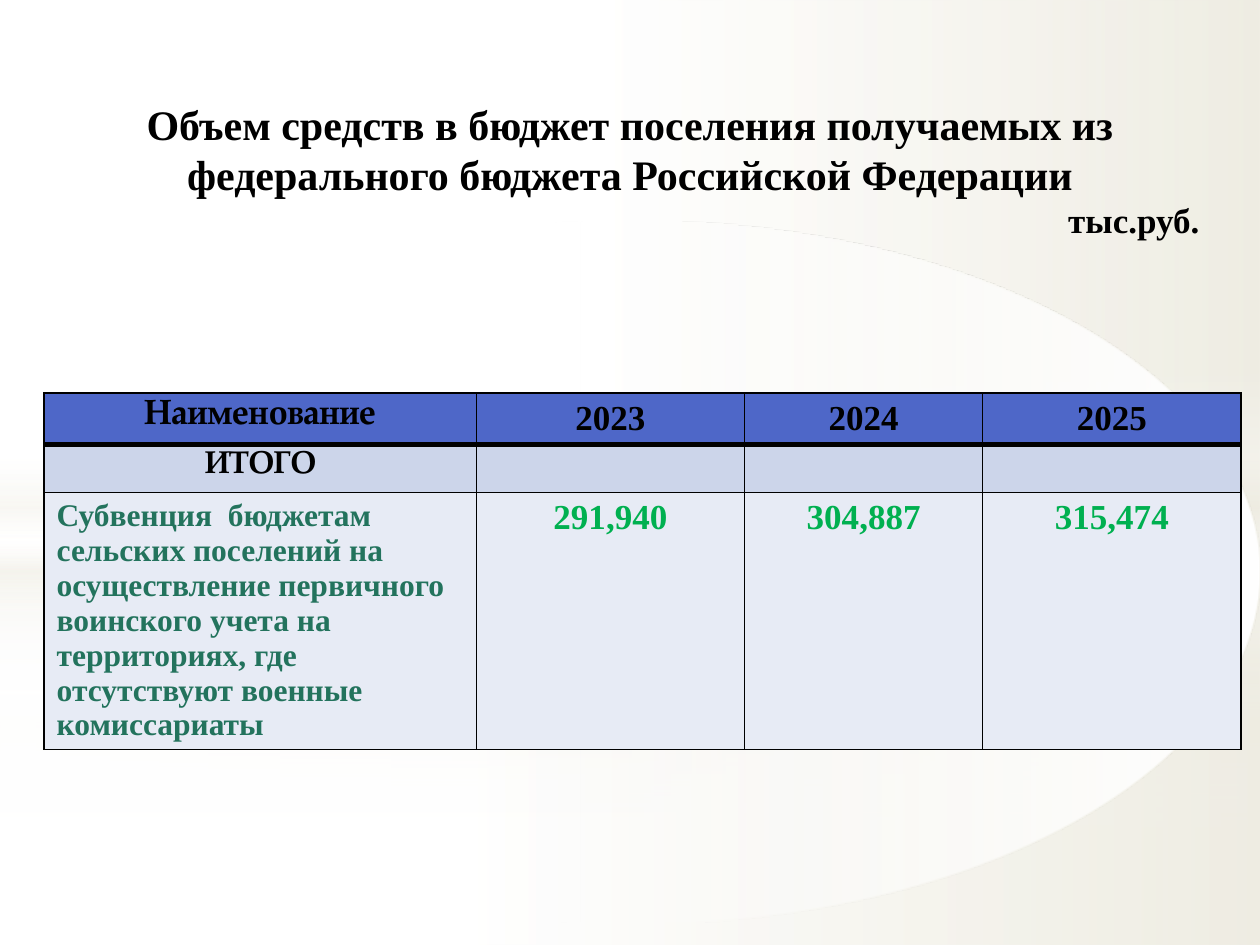
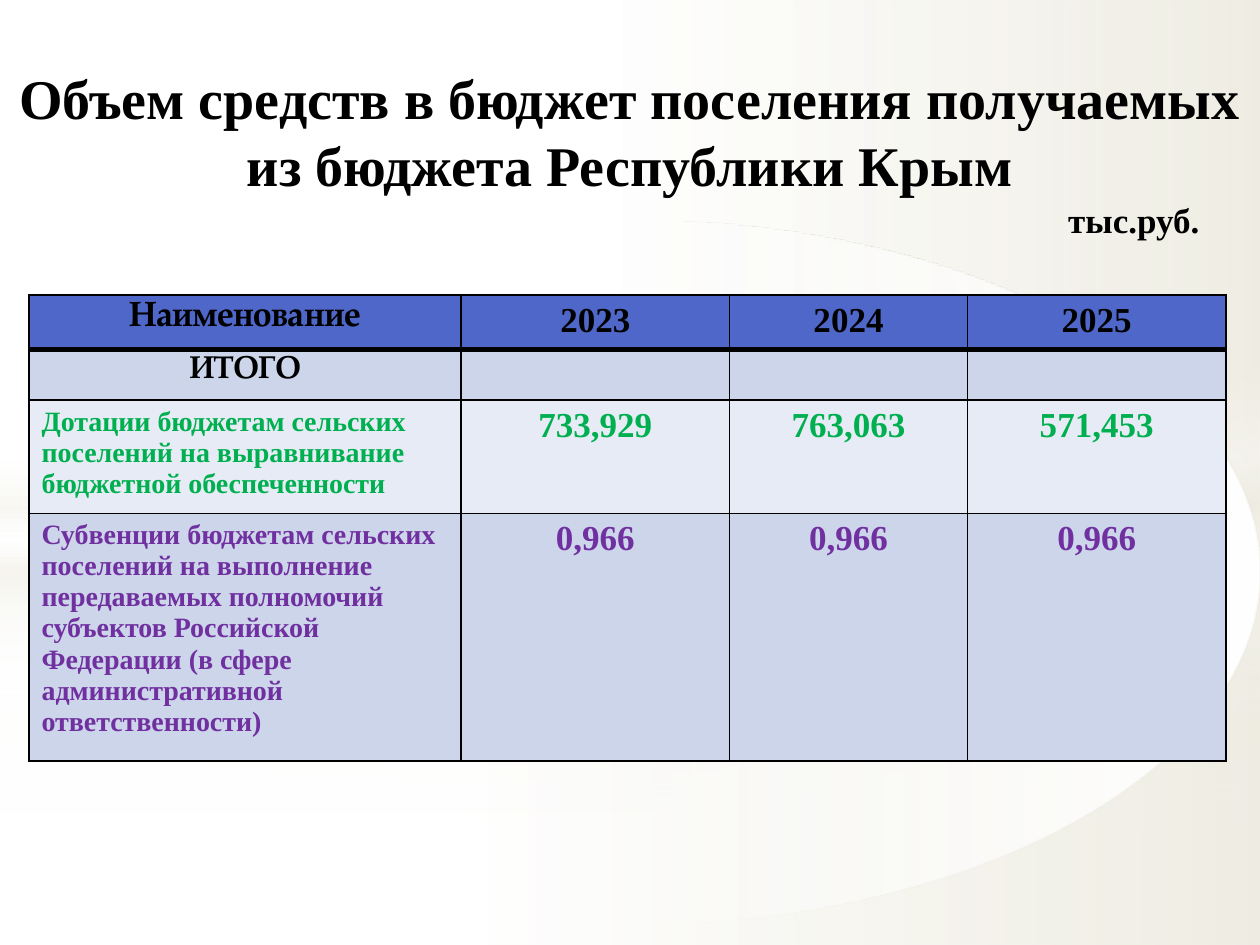
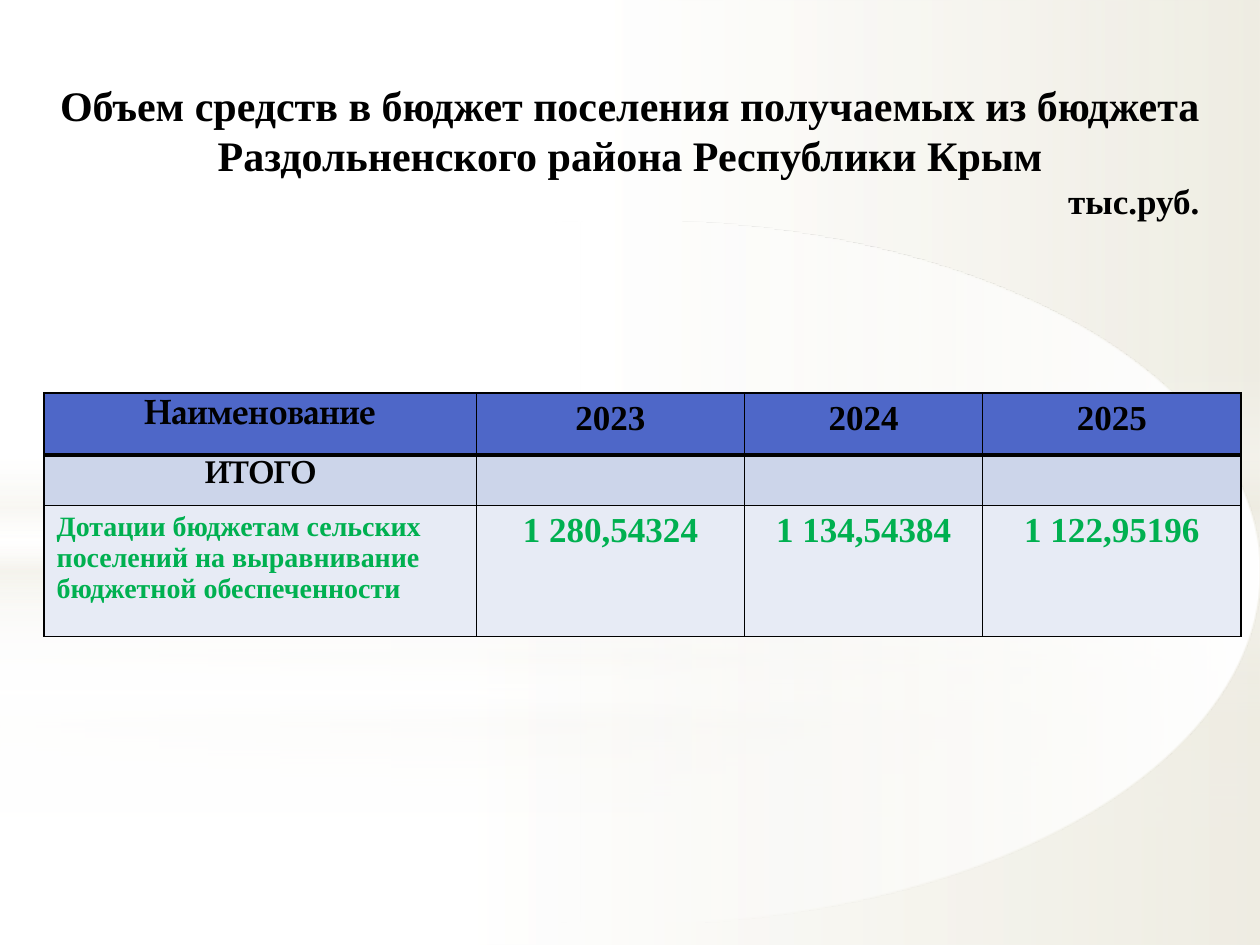
from lxml import etree
from pptx import Presentation
from pptx.dml.color import RGBColor
from pptx.enum.shapes import MSO_SHAPE as Preset
from pptx.enum.text import MSO_ANCHOR as Anchor, PP_ALIGN as Align
from pptx.oxml.ns import qn
from pptx.util import Inches, Pt

BLACK = RGBColor(0x00, 0x00, 0x00)
WHITE = RGBColor(0xFF, 0xFF, 0xFF)
SAND = RGBColor(0xEE, 0xEC, 0xE1)
HEADER_BLUE = RGBColor(0x4E, 0x67, 0xC8)
BAND_DARK = RGBColor(0xCC, 0xD5, 0xEA)
BAND_LIGHT = RGBColor(0xE7, 0xEB, 0xF5)
TEAL = RGBColor(0x23, 0x73, 0x5D)
GREEN = RGBColor(0x00, 0xB0, 0x50)
PURPLE = RGBColor(0x70, 0x30, 0xA0)

SERIF = "Times New Roman"
LABEL_FONT = "TeX Gyre Pagella"
COLUMN_WIDTHS = (3.43, 2.13, 1.89, 2.05)
YEARS = ("2023", "2024", "2025")
THIN, THICK = 0.96, 3
UNIT_INDENT = 8.38

GLOW = [(0, WHITE, 0), (29, WHITE, 30), (45, SAND, 40),
        (55, WHITE, 26), (65, SAND, 60), (100, WHITE, 0)]


def side_wash(middle, opacities):
    positions = (0, middle, 100)
    return list(zip(positions, (WHITE, WHITE, SAND), opacities))


def halo(end):
    return [(0, WHITE, 100), (end, WHITE, 0)]


BACKDROP = [
    (Preset.RECTANGLE, 5.58, 1.92, side_wash(37, (91, 76, 79)), 0),
    (Preset.RECTANGLE, 0, 5.58, side_wash(48, (89, 62, 79)), 0),
    (Preset.RECTANGLE, 4.12, 2.5, GLOW, 90),
    (Preset.OVAL, 1.75, 5.58, halo(56), 180),
    (Preset.RECTANGLE, 4.23, 3.27, side_wash(37, (92, 77, 80)), 0),
    (Preset.RECTANGLE, 0, 4.23, side_wash(48, (90, 63, 80)), 0),
    (Preset.RECTANGLE, 2.9, 2.5, GLOW, 90),
    (Preset.OVAL, 1.75, 5.58, halo(54), 180),
]

SLIDES = [
    {
        "title": "Объем средств в бюджет поселения получаемых из "
                 "федерального бюджета Российской Федерации",
        "title_size": 24,
        "title_box": (0, 0.6, 10, 1.49),
        "table_box": (0.35, 3.12, 9.49, 3.03),
        "row_heights": (0.41, 0.35, 2.04),
        "grants": [
            ("Субвенция  бюджетам сельских поселений на осуществление "
             "первичного воинского учета на территориях, где отсутствуют "
             "военные комиссариаты", 18, TEAL,
             ("291,940", "304,887", "315,474"), GREEN),
        ],
    },
    {
        "title": "Объем средств в бюджет поселения получаемых из бюджета "
                 "Республики Крым",
        "title_size": 32,
        "title_box": (0, 0.55, 10, 1.31),
        "table_box": (0.23, 2.34, 9.49, 3.7),
        "row_heights": (0.41, 0.35, 0.84, 1.83),
        "grants": [
            ("Дотации бюджетам сельских поселений на выравнивание бюджетной "
             "обеспеченности", 16, GREEN,
             ("733,929", "763,063", "571,453"), GREEN),
            ("Субвенции бюджетам сельских поселений на выполнение "
             "передаваемых полномочий субъектов Российской Федерации "
             "(в сфере административной ответственности)", 16, PURPLE,
             ("0,966", "0,966", "0,966"), PURPLE),
        ],
    },
    {
        "title": "Объем средств в бюджет поселения получаемых из бюджета "
                 "Раздольненского района Республики Крым",
        "title_size": 24,
        "title_box": (0, 0.6, 10, 1.19),
        "table_box": (0.35, 3.12, 9.49, 1.92),
        "row_heights": (0.49, 0.37, 1.04),
        "grants": [
            ("Дотации бюджетам сельских поселений на выравнивание бюджетной "
             "обеспеченности", 16, GREEN,
             ("1 280,54324", "1 134,54384", "1 122,95196"), GREEN),
        ],
    },
]


def set_attributes(target, values):
    for name, value in values.items():
        setattr(target, name, value)


def add_run(paragraph, text, size, color=BLACK, font_name=SERIF):
    run = paragraph.add_run()
    run.text = text
    set_attributes(run.font, {"size": Pt(size), "name": font_name, "bold": True})
    run.font.color.rgb = color


def add_element(parent, tag, **attributes):
    values = {name: str(value) for name, value in attributes.items()}
    return etree.SubElement(parent, qn(tag), values)


def fill_gradient(shape, stops, angle):
    gradient = etree.Element(qn("a:gradFill"), rotWithShape="1")
    stop_list = add_element(gradient, "a:gsLst")
    for position, color, opacity in stops:
        stop = add_element(stop_list, "a:gs", pos=position * 1000)
        tint = add_element(stop, "a:srgbClr", val=color)
        add_element(tint, "a:alpha", val=opacity * 1000)
    add_element(gradient, "a:lin", ang=angle * 60000, scaled=0)
    shape.element.spPr.find(qn("a:prstGeom")).addnext(gradient)


def add_backdrop(slide, master, width):
    for preset, top, height, stops, angle in BACKDROP:
        shape = slide.shapes.add_shape(
            preset, 0, Inches(top), width, Inches(height))
        shape.shadow.inherit = False
        shape.line.fill.background()
        fill_gradient(shape, stops, angle)
        master.shapes.element.append(shape.element)


def add_title(slide, box, title, size):
    frame = slide.shapes.add_textbox(*map(Inches, box)).text_frame
    set_attributes(frame, {"word_wrap": True, "vertical_anchor": Anchor.MIDDLE})
    heading = frame.paragraphs[0]
    unit = frame.add_paragraph()
    heading.alignment = Align.CENTER
    unit.alignment = Align.LEFT
    unit._p.get_or_add_pPr().set("marL", str(Inches(UNIT_INDENT)))
    add_run(heading, title, size)
    add_run(unit, "тыс.руб.", 20)


def style_cell(cell, row_index, fill_color):
    properties = cell._tc.get_or_add_tcPr()
    top = THICK if row_index == 1 else THIN
    bottom = THICK if row_index == 0 else THIN
    for side, weight in zip("LRTB", (THIN, THIN, top, bottom)):
        line = add_element(properties, f"a:ln{side}", w=Pt(weight))
        add_element(add_element(line, "a:solidFill"), "a:srgbClr", val=BLACK)
    cell.fill.solid()
    cell.fill.fore_color.rgb = fill_color


def write_cell(cell, text, size, color=BLACK, font_name=SERIF,
               alignment=Align.CENTER):
    paragraph = cell.text_frame.paragraphs[0]
    paragraph.alignment = alignment
    add_run(paragraph, text, size, color, font_name)


def size_empty_cell(cell, size):
    paragraph = cell.text_frame.paragraphs[0]
    ending = add_element(paragraph._p, "a:endParaRPr", sz=size * 100)
    add_element(ending, "a:latin", typeface=SERIF)


def add_grant_table(slide, box, row_heights, grants):
    frame = slide.shapes.add_table(
        len(row_heights), len(COLUMN_WIDTHS), *map(Inches, box))
    table = frame.table
    for column, width in zip(table.columns, COLUMN_WIDTHS):
        column.width = Inches(width)
    for row_index, (row, height) in enumerate(zip(table.rows, row_heights)):
        row.height = Inches(height)
        band = BAND_DARK if row_index % 2 else BAND_LIGHT
        for cell in row.cells:
            style_cell(cell, row_index, band if row_index else HEADER_BLUE)
    frame.height = Inches(box[3])

    write_cell(table.cell(0, 0), "Наименование", 20, font_name=LABEL_FONT)
    write_cell(table.cell(1, 0), "ИТОГО", 18, font_name=LABEL_FONT)
    for column_index, year in enumerate(YEARS, 1):
        write_cell(table.cell(0, column_index), year, 20)
        size_empty_cell(table.cell(1, column_index), 18)
    for row_index, grant in enumerate(grants, 2):
        name, name_size, name_color, amounts, amount_color = grant
        write_cell(table.cell(row_index, 0), name, name_size, name_color,
                   alignment=Align.LEFT)
        for column_index, amount in enumerate(amounts, 1):
            write_cell(table.cell(row_index, column_index), amount, 20,
                       amount_color)


def main():
    presentation = Presentation()
    set_attributes(presentation, {"slide_width": Inches(10),
                                  "slide_height": Inches(7.5)})
    blank = presentation.slide_layouts[6]
    for index, content in enumerate(SLIDES):
        slide = presentation.slides.add_slide(blank)
        if index == 0:
            add_backdrop(slide, presentation.slide_master,
                         presentation.slide_width)
        add_grant_table(slide, content["table_box"], content["row_heights"],
                        content["grants"])
        add_title(slide, content["title_box"], content["title"],
                  content["title_size"])
    presentation.save("out.pptx")


if __name__ == "__main__":
    main()
